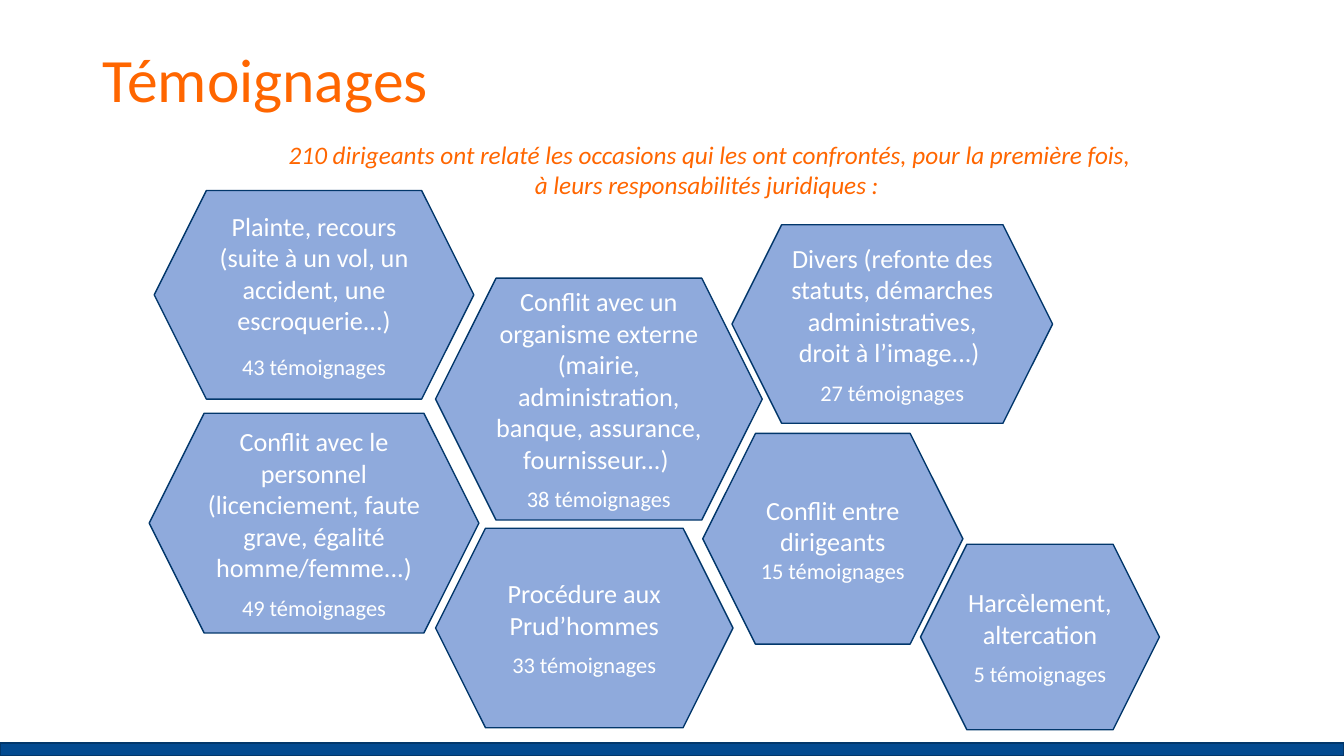
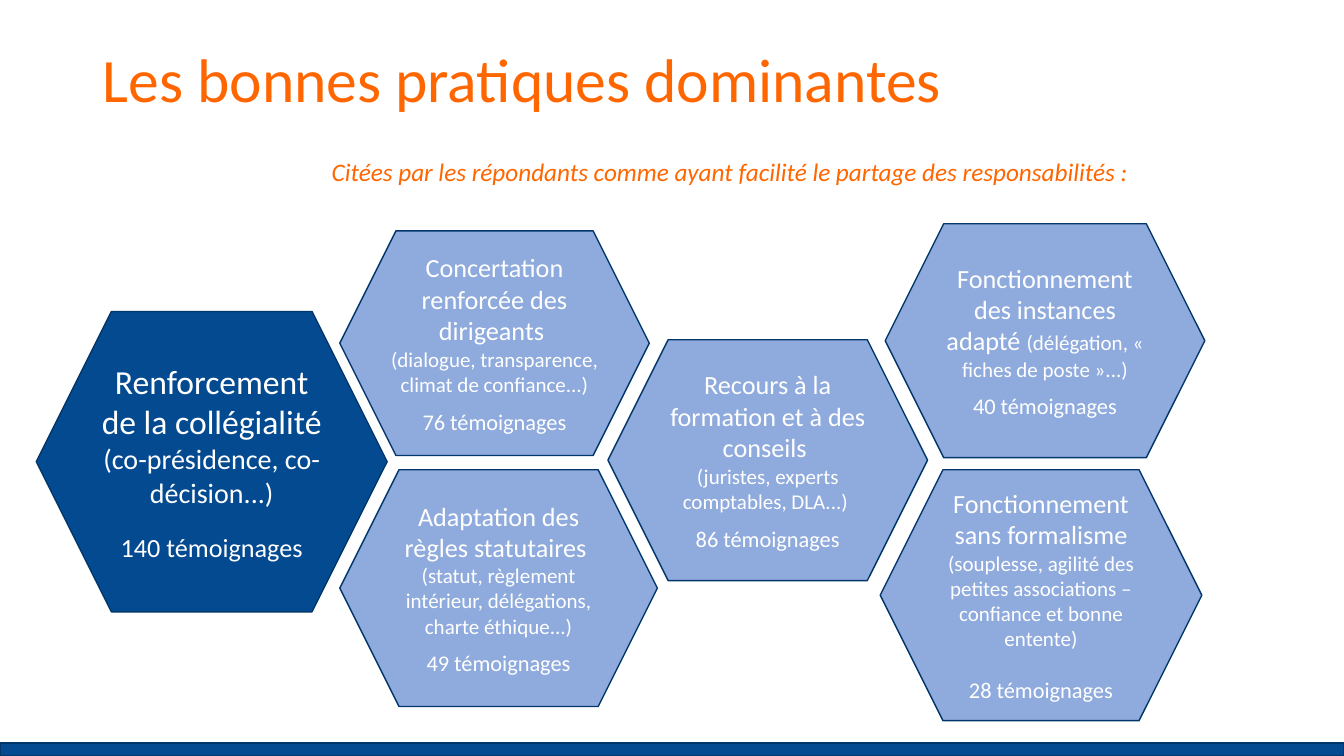
"""Build two slides of hexagons summarising testimonies and good practices."""
from pptx import Presentation
from pptx.dml.color import RGBColor
from pptx.enum.shapes import MSO_SHAPE
from pptx.enum.text import MSO_ANCHOR, PP_ALIGN
from pptx.util import Inches, Pt

ORANGE = RGBColor(0xFF, 0x66, 0x00)
NAVY = RGBColor(0x03, 0x4A, 0x90)
OUTLINE = RGBColor(0x02, 0x37, 0x6B)
LIGHT_BLUE = RGBColor(0x8F, 0xAA, 0xDC)
WHITE = RGBColor(0xFF, 0xFF, 0xFF)
FONT = "Calibri"
HEAD, DETAIL, COUNT = 18.7, 15, 16
GAP = 8


def add_run(p, text, size, color, italic=False):
    r = p.add_run()
    r.text = text
    r.font.name = FONT
    r.font.size = Pt(size)
    r.font.color.rgb = color
    r.font.italic = italic


def add_block(s, preset, box, fill):
    sp = s.shapes.add_shape(preset, *[Inches(v) for v in box])
    sp.shadow.inherit = False
    sp.fill.solid()
    sp.fill.fore_color.rgb = fill
    sp.line.color.rgb = OUTLINE
    sp.line.width = Pt(1)
    return sp


TESTIMONIES = [
    ((7.26, 2.23, 3.18, 1.97), LIGHT_BLUE, GAP, [
        [("Divers (refonte des statuts, démarches administratives, droit à l’image...) ", HEAD)],
        [("27 témoignages", COUNT)]]),
    ((1.48, 4.1, 3.27, 2.18), LIGHT_BLUE, GAP, [
        [("Conflit avec le personnel (licenciement, faute grave, égalité homme/femme...)", HEAD)],
        [("49 témoignages", COUNT)]]),
    ((4.32, 5.24, 2.95, 1.98), LIGHT_BLUE, GAP, [
        [("Procédure aux Prud’hommes", HEAD)],
        [("33 témoignages", COUNT)]]),
    ((4.32, 2.76, 3.24, 2.4), LIGHT_BLUE, GAP, [
        [("Conflit avec un organisme externe (mairie, administration, banque, assurance, "
          "fournisseur...) ", HEAD)],
        [("38 témoignages", COUNT)]]),
    ((9.13, 5.4, 2.37, 1.84), LIGHT_BLUE, GAP, [
        [("Harcèlement, altercation", HEAD)],
        [("5 témoignages", COUNT)]]),
    ((6.97, 4.3, 2.58, 2.09), LIGHT_BLUE, 0, [
        [("Conflit entre dirigeants", HEAD)],
        [("15 témoignages", COUNT)]]),
    ((1.53, 1.89, 3.17, 2.07), LIGHT_BLUE, 12, [
        [("Plainte, recours (suite à un vol, un accident, une escroquerie...)", HEAD)],
        [("43 témoignages", COUNT)]]),
]

PRACTICES = [
    ((0.36, 3.09, 3.48, 2.98), NAVY, 16, [
        [("Renforcement de la collégialité ", 24), ("(co-présidence, co-décision...)", 20)],
        [("140 témoignages", HEAD)]]),
    ((6.03, 3.37, 3.17, 2.39), LIGHT_BLUE, GAP, [
        [("Recours à la formation et à des conseils ", HEAD)],
        [("(juristes, experts comptables, DLA...) ", DETAIL)],
        [("86 témoignages", COUNT)]]),
    ((3.37, 2.29, 3.07, 2.23), LIGHT_BLUE, GAP, [
        [("Concertation renforcée des dirigeants ", HEAD)],
        [("(dialogue, transparence, climat de confiance...)", DETAIL)],
        [("76 témoignages", COUNT)]]),
    ((3.37, 4.66, 3.15, 2.35), LIGHT_BLUE, GAP, [
        [("Adaptation des règles statutaires ", HEAD)],
        [("(statut, règlement intérieur, délégations, charte éthique...)", DETAIL)],
        [("49 témoignages", COUNT)]]),
    ((8.78, 2.22, 3.17, 2.32), LIGHT_BLUE, GAP, [
        [("Fonctionnement des instances adapté ", HEAD),
         ("(délégation, « fiches de poste »...)", DETAIL)],
        [("40 témoignages", COUNT)]]),
    ((8.73, 4.66, 3.19, 2.49), LIGHT_BLUE, 18, [
        [("Fonctionnement sans formalisme ", HEAD),
         ("(souplesse, agilité des petites associations – confiance et bonne entente)", DETAIL)],
        [("28 témoignages", COUNT)]]),
]

SLIDES = [
    ("Témoignages", (2.71, 1.33, 8.66, 1.01),
     "210 dirigeants ont relaté les occasions qui les ont confrontés, pour la première fois, "
     "à leurs responsabilités juridiques : ", TESTIMONIES),
    ("Les bonnes pratiques dominantes", (1.75, 1.5, 10.98, 0.4),
     "Citées par les répondants comme ayant facilité le partage des responsabilités :",
     PRACTICES),
]

prs = Presentation()
prs.slide_width = Inches(13.33)
prs.slide_height = Inches(7.5)

for title, intro_box, intro, hexagons in SLIDES:
    s = prs.slides.add_slide(prs.slide_layouts[6])
    add_block(s, MSO_SHAPE.RECTANGLE, (0, 7.37, 13.33, 0.13), NAVY)

    for box, fill, gap, paragraphs in hexagons:
        sp = add_block(s, MSO_SHAPE.HEXAGON, box, fill)
        tf = sp.text_frame
        tf.word_wrap = True
        tf.vertical_anchor = MSO_ANCHOR.MIDDLE
        if paragraphs[0][0][0].startswith("Concertation"):
            tf.margin_left = tf.margin_right = 0
        for i, runs in enumerate(paragraphs):
            p = tf.add_paragraph() if i else tf.paragraphs[0]
            p.alignment = PP_ALIGN.CENTER
            for text, size in runs:
                add_run(p, text, size, WHITE)
        p.space_before = Pt(gap)

    tf = s.shapes.add_textbox(Inches(0.92), Inches(0.09), Inches(12.12), Inches(1.45)).text_frame
    tf.word_wrap = True
    tf.vertical_anchor = MSO_ANCHOR.MIDDLE
    tf.paragraphs[0].line_spacing = 0.9
    add_run(tf.paragraphs[0], title, 44, ORANGE)

    tf = s.shapes.add_textbox(*[Inches(v) for v in intro_box]).text_frame
    tf.word_wrap = True
    tf.paragraphs[0].alignment = PP_ALIGN.CENTER
    add_run(tf.paragraphs[0], intro, 18, ORANGE, italic=True)

prs.save("out.pptx")
